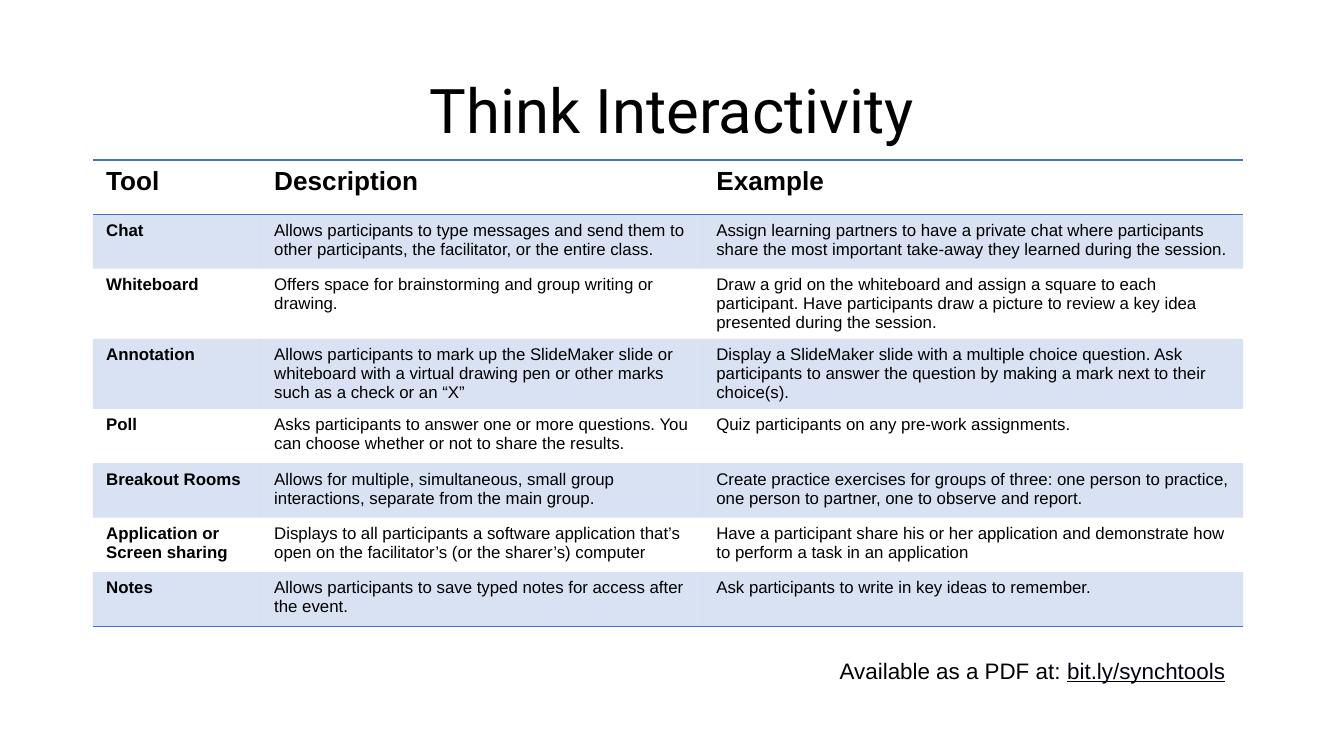
import pptx
import pptx.dml.color
import pptx.enum.text
import pptx.oxml
import pptx.oxml.ns
import pptx.util

WIDTH = 10
HEIGHT = WIDTH * 9 / 16
LEFT = 0.69
COLUMNS = (1.25, 3.29, 4.02)
ROW_HEIGHT = 3.24 / 8
COLORS = {"text": "000000", "link": "000010", "accent": "4472C4"}
BAND_OPACITY = 20
NO_STYLE = "{2D5ABB26-0587-4C30-8999-92F81FD0307C}"

ROWS = [
    ("Tool", "Description", "Example"),
    ("Chat",
     "Allows participants to type messages and send them to other participants, "
     "the facilitator, or the entire class.",
     "Assign learning partners to have a private chat where participants share "
     "the most important take-away they learned during the session."),
    ("Whiteboard",
     "Offers space for brainstorming and group writing or drawing.",
     "Draw a grid on the whiteboard and assign a square to each participant. "
     "Have participants draw a picture to review a key idea presented during "
     "the session."),
    ("Annotation",
     "Allows participants to mark up the SlideMaker slide or whiteboard with a "
     "virtual drawing pen or other marks such as a check or an “X”",
     "Display a SlideMaker slide with a multiple choice question. Ask "
     "participants to answer the question by making a mark next to their "
     "choice(s)."),
    ("Poll",
     "Asks participants to answer one or more questions. You can choose whether "
     "or not to share the results.",
     "Quiz participants on any pre-work assignments."),
    ("Breakout Rooms",
     "Allows for multiple, simultaneous, small group interactions, separate "
     "from the main group.",
     "Create practice exercises for groups of three: one person to practice, "
     "one person to partner, one to observe and report."),
    ("Application or Screen sharing",
     "Displays to all participants a software application that’s open on the "
     "facilitator’s (or the sharer’s) computer",
     "Have a participant share his or her application and demonstrate how to "
     "perform a task in an application"),
    ("Notes",
     "Allows participants to save typed notes for access after the event.",
     "Ask participants to write in key ideas to remember."),
]


def inches(*lengths):
    return [pptx.util.Inches(length) for length in lengths]


def add_run(para, text, size, font="Arial", color="text", bold=False, underline=False):
    span = para.add_run()
    span.text = text
    span.font.size = pptx.util.Pt(size)
    span.font.name = font
    span.font.bold = bold
    span.font.underline = underline
    span.font.color.rgb = pptx.dml.color.RGBColor.from_string(COLORS[color])


def add_title(slide, text):
    box = slide.shapes.add_textbox(*inches(LEFT, 0.3, WIDTH - 2 * LEFT, 1.09))
    box.text_frame.word_wrap = True
    box.text_frame.vertical_anchor = pptx.enum.text.MSO_ANCHOR.MIDDLE
    para = box.text_frame.paragraphs[0]
    para.alignment = pptx.enum.text.PP_ALIGN.CENTER
    para.line_spacing = 0.9
    add_run(para, text, 33, font="Roboto")


def add_border(cell, sides):
    """Draw accent lines on the given sides, T before B."""
    properties = cell._tc.get_or_add_tcPr()
    for position, side in enumerate(sides):
        line = pptx.oxml.parse_xml(
            f'<a:ln{side} {pptx.oxml.ns.nsdecls("a")} w="12700"><a:solidFill>'
            f'<a:srgbClr val="{COLORS["accent"]}"/></a:solidFill></a:ln{side}>')
        properties.insert(position, line)


def fill_band(cell):
    """Fill the cell with a translucent accent colour."""
    cell.fill.solid()
    cell.fill.fore_color.rgb = pptx.dml.color.RGBColor.from_string(COLORS["accent"])
    color = cell._tc.tcPr.find(".//" + pptx.oxml.ns.qn("a:srgbClr"))
    color.append(pptx.oxml.parse_xml(
        f'<a:alpha {pptx.oxml.ns.nsdecls("a")} val="{BAND_OPACITY * 1000}"/>'))


def add_tool_table(slide):
    frame = slide.shapes.add_table(
        len(ROWS), len(COLUMNS),
        *inches(LEFT, 1.19, sum(COLUMNS), ROW_HEIGHT * len(ROWS)))
    table = frame.table
    table._tbl.tblPr.find(pptx.oxml.ns.qn("a:tableStyleId")).text = NO_STYLE
    for column, width in zip(table.columns, COLUMNS):
        column.width = pptx.util.Inches(width)

    borders = {0: "TB", len(ROWS) - 1: "B"}
    for row_index, texts in enumerate(ROWS):
        heading = row_index == 0
        for column_index, text in enumerate(texts):
            cell = table.cell(row_index, column_index)
            cell.margin_bottom = pptx.util.Inches(0.02)
            add_run(cell.text_frame.paragraphs[0], text, 14 if heading else 9,
                    bold=heading or column_index == 0)
            if row_index % 2:
                fill_band(cell)
            else:
                cell.fill.background()
            add_border(cell, borders.get(row_index, ""))


def add_download_note(slide):
    box = slide.shapes.add_textbox(*inches(6.15, 4.84, 3.1, 0.54))
    box.text_frame.word_wrap = False
    para = box.text_frame.paragraphs[0]
    add_run(para, "Available as a PDF at: ", 12)
    add_run(para, "bit.ly/synchtools", 12, color="link", underline=True)


def main():
    deck = pptx.Presentation()
    deck.slide_width, deck.slide_height = inches(WIDTH, HEIGHT)
    slide = deck.slides.add_slide(deck.slide_layouts[6])
    add_title(slide, "Think Interactivity")
    add_tool_table(slide)
    add_download_note(slide)
    deck.save("out.pptx")


if __name__ == "__main__":
    main()
